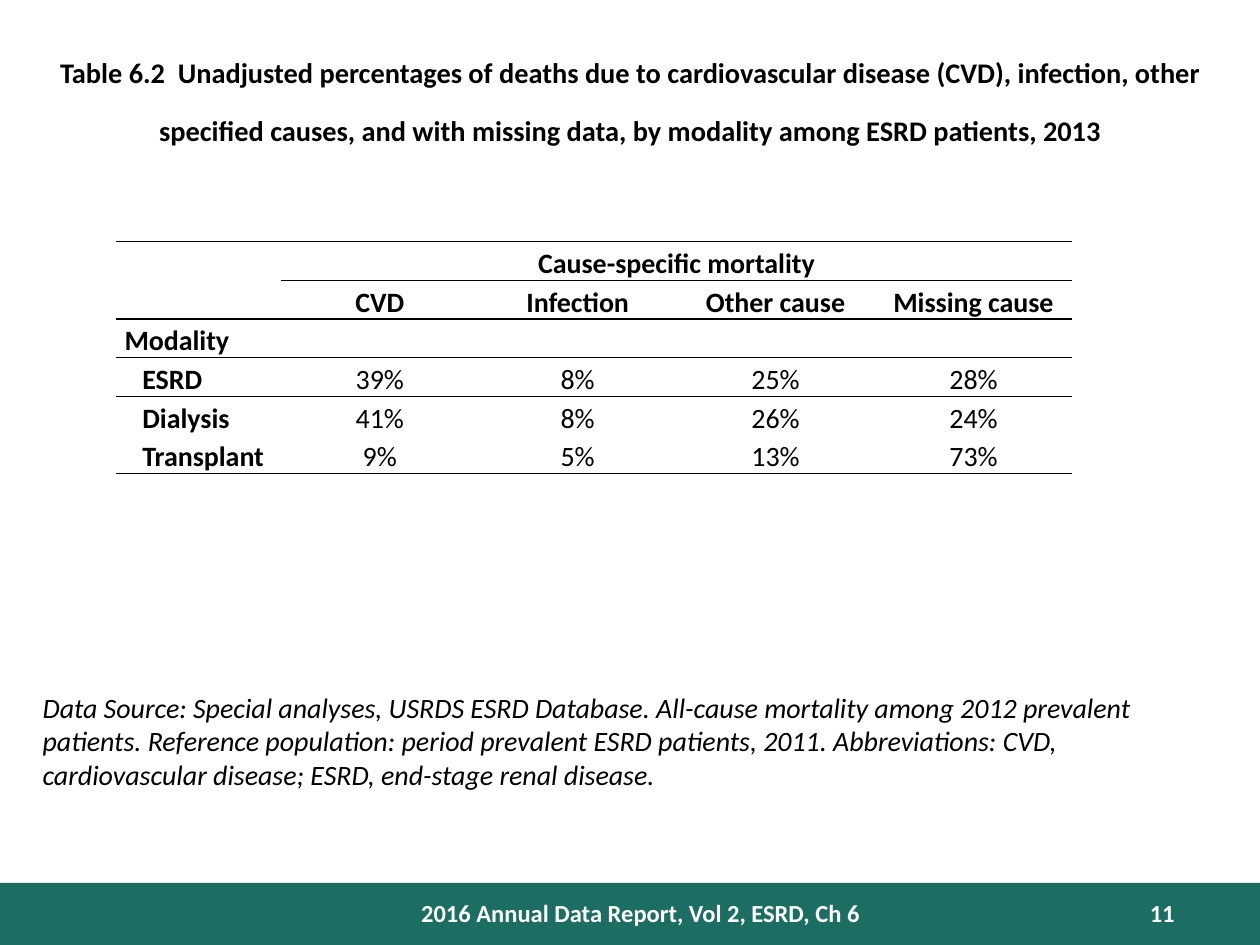
"""Build the slide with the table of cause-specific deaths by modality."""
from dataclasses import dataclass

from lxml import etree
from pptx import Presentation
from pptx.dml.color import RGBColor
from pptx.enum.shapes import MSO_SHAPE
from pptx.enum.text import MSO_ANCHOR, PP_ALIGN
from pptx.oxml.ns import qn
from pptx.util import Cm, Pt

RECT = MSO_SHAPE.RECTANGLE
MIDDLE = MSO_ANCHOR.MIDDLE
LEFT, CENTER, RIGHT = PP_ALIGN.LEFT, PP_ALIGN.CENTER, PP_ALIGN.RIGHT
FONT = "Calibri"
BLACK, WHITE, GREEN = "000000", "FFFFFF", "1C6E62"
NO_GRID_STYLE = "{2D5ABB26-0587-4C30-8999-92F81FD0307C}"

ROWS = [
    ["", "Cause-specific mortality", "", "", ""],
    ["", "CVD", "Infection", "Other cause", "Missing cause"],
    ["Modality", "", "", "", ""],
    ["ESRD", "39%", "8%", "25%", "28%"],
    ["Dialysis", "41%", "8%", "26%", "24%"],
    ["Transplant", "9%", "5%", "13%", "73%"],
]
HEADER_ROWS = 2
FIRST_DATA_ROW = 3
RULES = {0, 1, 2, 3, len(ROWS)}
GROUP_RULE = 1


@dataclass
class Label:
    text: str
    left: float
    top: float
    width: float
    height: float
    size: float
    color: str = BLACK
    align: PP_ALIGN = CENTER
    bold: bool = True
    italic: bool = False
    baseline: int = 0


LABELS = [
    Label("Table 6.2  Unadjusted percentages of deaths due to cardiovascular disease (CVD), "
          "infection, other specified causes, and with missing data, by modality among "
          "ESRD patients, 2013", 0, 0.86, 25.4, 2.64, 28, baseline=30000),
    Label("2016 Annual Data Report, Vol 2, ESRD, Ch 6", 8.05, 17.98, 9.73, 0.84, 14, WHITE),
    Label("11", 21.39, 17.98, 2.54, 0.76, 14, WHITE, RIGHT),
    Label("Data Source: Special analyses, USRDS ESRD Database. All-cause mortality among 2012 "
          "prevalent patients. Reference population: period prevalent ESRD patients, 2011. "
          "Abbreviations: CVD, cardiovascular disease; ESRD, end-stage renal disease.",
          0.61, 13.79, 24.16, 2.31, 16, align=LEFT, bold=False, italic=True),
]


def rgb(value: str) -> RGBColor:
    return RGBColor.from_string(value)


def style_runs(p, size: float, color: str, bold: bool, italic: bool = False) -> None:
    for r in p.runs:
        r.font.name, r.font.size = FONT, Pt(size)
        r.font.bold, r.font.italic = bold, italic
        r.font.color.rgb = rgb(color)


def add_label(s, label: Label) -> None:
    sp = s.shapes.add_textbox(Cm(label.left), Cm(label.top), Cm(label.width), Cm(label.height))
    tf = sp.text_frame
    tf.word_wrap = True
    tf.text = label.text
    p = tf.paragraphs[0]
    p.alignment = label.align
    style_runs(p, label.size, label.color, label.bold, label.italic)
    if label.baseline:
        p.runs[0].font._element.set("baseline", str(label.baseline))


def add_rule(cell, tag: str) -> None:
    ln = etree.SubElement(cell._tc.get_or_add_tcPr(), qn(tag), w=str(Pt(1)))
    fill = etree.SubElement(ln, qn("a:solidFill"))
    etree.SubElement(fill, qn("a:srgbClr"), val=BLACK)


def format_cell(cell, text: str, row: int, col: int) -> None:
    cell.margin_left = cell.margin_right = Cm(0.18)
    cell.margin_top = cell.margin_bottom = Cm(0)
    cell.vertical_anchor = MIDDLE
    for tag, rule in (("a:lnT", row), ("a:lnB", row + 1)):
        if rule in RULES and (col or rule != GROUP_RULE):
            add_rule(cell, tag)
    cell.fill.background()
    if text:
        cell.text_frame.text = text
        p = cell.text_frame.paragraphs[0]
        p.alignment = CENTER if col else LEFT
        p.line_spacing = 1.15
        if col == 0 and row >= FIRST_DATA_ROW:
            p._p.get_or_add_pPr().set("indent", str(Cm(0.36)))
        style_runs(p, 16, BLACK, col == 0 or row < HEADER_ROWS)


def add_mortality_table(s) -> None:
    frame = s.shapes.add_table(len(ROWS), len(ROWS[0]), Cm(2.33), Cm(4.87), Cm(19.29), Cm(4.68))
    table = frame.table
    table.first_row = table.horz_banding = False
    table._tbl.tblPr.find(qn("a:tableStyleId")).text = NO_GRID_STYLE
    for i, column in enumerate(table.columns):
        column.width = Cm(3.99 if i else 3.33)
    for i, (row, texts) in enumerate(zip(table.rows, ROWS)):
        row.height = Cm(0.78)
        for j, text in enumerate(texts):
            format_cell(table.cell(i, j), text, i, j)
    table.cell(0, 0).merge(table.cell(1, 0))
    table.cell(0, 1).merge(table.cell(0, 4))


def main() -> None:
    prs = Presentation()
    prs.slide_width, prs.slide_height = Cm(25.4), Cm(19.05)
    s = prs.slides.add_slide(prs.slide_layouts[6])
    bar = s.shapes.add_shape(RECT, Cm(0), Cm(17.8), prs.slide_width, Cm(1.25))
    bar.shadow.inherit = False
    bar.fill.solid()
    bar.fill.fore_color.rgb = rgb(GREEN)
    bar.line.fill.background()
    for label in LABELS:
        add_label(s, label)
    add_mortality_table(s)
    prs.save("out.pptx")


if __name__ == "__main__":
    main()
